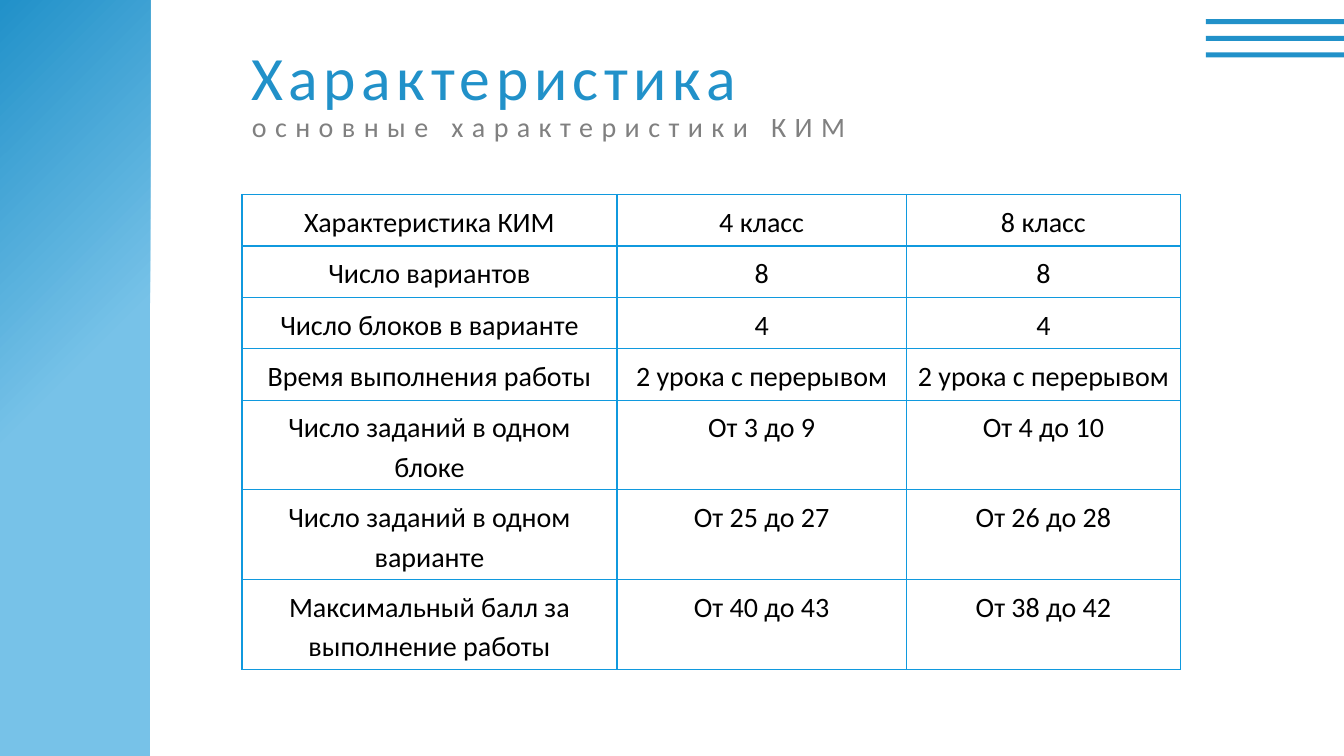
import pptx
import pptx.dml.color
import pptx.enum.shapes
import pptx.enum.text
import pptx.oxml
import pptx.oxml.ns
import pptx.util

Inches = pptx.util.Inches
Pt = pptx.util.Pt

FONT = "Calibri"
BLUE = "2191C9"
LIGHT_BLUE = "77C2E8"
BORDER = "1099DE"
GRAY = "808080"
BLACK = "000000"

ROWS = [
    ("Характеристика КИМ", "4 класс", "8 класс"),
    ("Число вариантов", "8", "8"),
    ("Число блоков в варианте", "4", "4"),
    ("Время выполнения работы", "2 урока с перерывом", "2 урока с перерывом"),
    ("Число заданий в одном блоке", "От 3 до 9", "От 4 до 10"),
    ("Число заданий в одном варианте", "От 25 до 27", "От 26 до 28"),
    ("Максимальный балл за выполнение работы", "От 40 до 43", "От 38 до 42"),
]
COLUMN_WIDTHS = [3.72, 2.87, 2.72]
ONE_LINE, TWO_LINES = 0.51, 0.89
ROW_HEIGHTS = [ONE_LINE] * 4 + [TWO_LINES] * 3


def rgb(value):
    return pptx.dml.color.RGBColor.from_string(value)


def add_run(paragraph, text, size, color, tracking=0):
    """Add a run; tracking is the letter spacing in points."""
    run = paragraph.add_run()
    run.text = text
    run.font.name = FONT
    run.font.size = Pt(size)
    run.font.bold = False
    run.font.color.rgb = rgb(color)
    if tracking:
        run.font._element.set("spc", str(tracking * 100))


def add_bar(slide, left, top, width, height):
    bar = slide.shapes.add_shape(
        pptx.enum.shapes.MSO_SHAPE.RECTANGLE,
        Inches(left), Inches(top), Inches(width), Inches(height))
    bar.shadow.inherit = False
    bar.line.fill.background()
    bar.fill.solid()
    bar.fill.fore_color.rgb = rgb(BLUE)
    return bar


def add_side_panel(slide, left, top, width, height):
    """Add the panel whose gradient spreads from its top left corner."""
    panel = add_bar(slide, left, top, width, height)
    stops = "".join(
        f'<a:gs pos="{percent * 1000}"><a:srgbClr val="{color}"/></a:gs>'
        for percent, color in [(0, BLUE), (50, LIGHT_BLUE), (100, LIGHT_BLUE)])
    gradient = pptx.oxml.parse_xml(
        f'<a:gradFill {pptx.oxml.ns.nsdecls("a")} rotWithShape="1">'
        f'<a:gsLst>{stops}</a:gsLst><a:path path="circle">'
        '<a:fillToRect r="100000" b="100000"/></a:path></a:gradFill>')
    properties = panel._element.spPr
    solid = properties.find(pptx.oxml.ns.qn("a:solidFill"))
    properties.replace(solid, gradient)


def add_corner_stripes(slide, left, top, width):
    for index in range(3):
        add_bar(slide, left, top + index * 0.165, width, 0.05)


def add_heading_line(slide, box, text, size, color, tracking, anchor):
    left, top, width, height = box
    frame = slide.shapes.add_textbox(
        Inches(left), Inches(top), Inches(width), Inches(height)).text_frame
    frame.word_wrap = True
    frame.vertical_anchor = anchor
    paragraph = frame.paragraphs[0]
    paragraph.line_spacing = 0.9
    add_run(paragraph, text, size, color, tracking)


def add_heading(slide, left, top, width):
    anchors = pptx.enum.text.MSO_ANCHOR
    add_heading_line(slide, (left, top, width, 0.85), "Характеристика",
                     44, BLUE, 4, anchors.BOTTOM)
    add_heading_line(slide, (left, top + 0.75, width, 0.47),
                     "основные характеристики КИМ", 20, GRAY, 6, anchors.TOP)


def outline_cell(cell):
    properties = cell._tc.get_or_add_tcPr()
    for index, side in enumerate(("lnL", "lnR", "lnT", "lnB")):
        properties.insert(index, pptx.oxml.parse_xml(
            f'<a:{side} {pptx.oxml.ns.nsdecls("a")} w="{Pt(1)}"><a:solidFill>'
            f'<a:srgbClr val="{BORDER}"/></a:solidFill></a:{side}>'))


def fill_cell(cell, text):
    cell.fill.background()
    cell.margin_left = cell.margin_right = Inches(0.1)
    cell.margin_top = cell.margin_bottom = Inches(0.06)
    paragraph = cell.text_frame.paragraphs[0]
    paragraph.alignment = pptx.enum.text.PP_ALIGN.CENTER
    paragraph.line_spacing = 1.15
    add_run(paragraph, text, 20, BLACK)
    outline_cell(cell)


def add_characteristics(slide, left, top):
    characteristics = slide.shapes.add_table(
        len(ROWS), len(COLUMN_WIDTHS), Inches(left), Inches(top),
        Inches(sum(COLUMN_WIDTHS)), Inches(sum(ROW_HEIGHTS))).table
    characteristics.first_row = False
    characteristics.horz_banding = False
    for column, width in zip(characteristics.columns, COLUMN_WIDTHS):
        column.width = Inches(width)
    for row, height, texts in zip(characteristics.rows, ROW_HEIGHTS, ROWS):
        row.height = Inches(height)
        for cell, text in zip(row.cells, texts):
            fill_cell(cell, text)


def main():
    presentation = pptx.Presentation()
    presentation.slide_width = Inches(13.33)
    presentation.slide_height = Inches(7.5)
    slide = presentation.slides.add_slide(presentation.slide_layouts[6])
    add_corner_stripes(slide, 11.96, 0.19, 1.37)
    add_side_panel(slide, 0, 0, 1.49, 7.5)
    add_heading(slide, 2.4, 0.33, 9.56)
    add_characteristics(slide, 2.4, 1.93)
    presentation.save("out.pptx")


if __name__ == "__main__":
    main()
